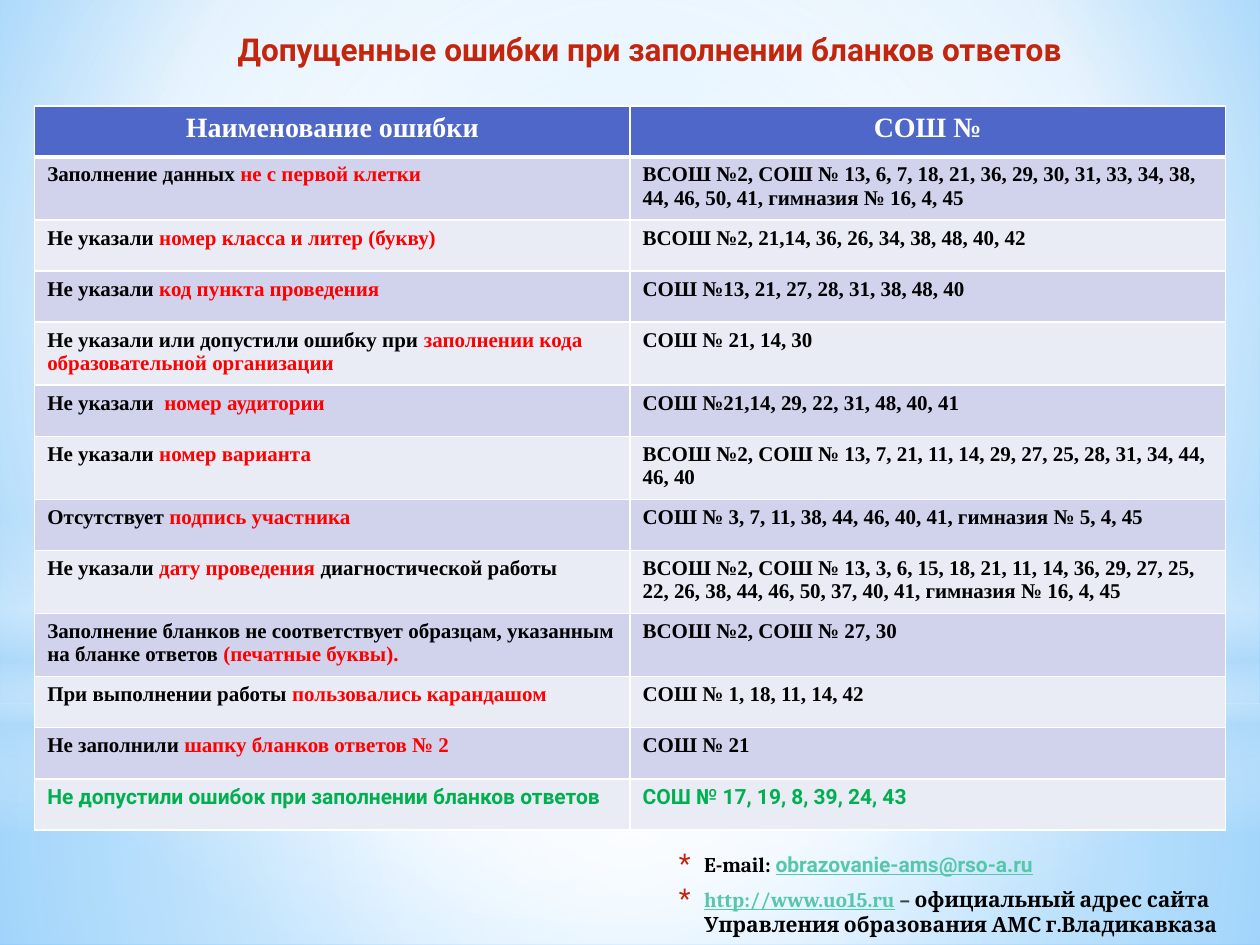
from dataclasses import dataclass
from typing import Optional

from lxml.etree import SubElement
from pptx import Presentation
from pptx.dml.color import RGBColor as RGB
from pptx.enum.shapes import MSO_SHAPE as Shape
from pptx.enum.text import MSO_ANCHOR as Anchor, PP_ALIGN as Align
from pptx.oxml import parse_xml
from pptx.oxml.ns import nsdecls, qn
from pptx.util import Pt


@dataclass(frozen=True)
class Theme:
    title: str = "C3260C"
    header: str = "4E67C8"
    bands: tuple = ("D0D3EB", "E9EBF5")
    white: str = "FFFFFF"
    text: str = "000000"
    mark: str = "FF0000"
    good: str = "00B050"
    link: str = "56C7AA"
    dash: str = "404040"
    sky: str = "B4DCFA"
    sky_mid: str = "9ED5FF"
    sky_deep: str = "5BB9FF"
    sans: str = "Roboto"
    serif: str = "Times New Roman"
    contact: str = "Cambria"
    title_size: int = 18
    header_size: int = 16
    body_size: int = 12


T = Theme()


@dataclass(frozen=True)
class Gradient:
    stops: tuple
    focus: Optional[tuple] = (50, 50, 50, 50)


@dataclass(frozen=True)
class Glow:
    shape: int
    top: float
    height: float
    gradient: Gradient


@dataclass(frozen=True)
class Mistake:
    before: str
    marked: str
    schools: str
    after: str = ""


SKY = Gradient(((0, T.sky_mid, 100), (60, T.white, 100), (100, T.sky_deep, 100)), (20, 10, 20, 60))
GLOWS = (
    Glow(Shape.RECTANGLE, 401.8, 138.2,
         Gradient(((0, T.white, 91), (37, T.white, 76), (100, T.sky, 79)))),
    Glow(Shape.RECTANGLE, 0, 401.8,
         Gradient(((0, T.white, 89), (48, T.white, 62), (100, T.sky, 79)))),
    Glow(Shape.RECTANGLE, 296.6, 180,
         Gradient(((0, T.white, 0), (29, T.white, 30), (45, T.sky, 40),
                   (55, T.white, 26), (65, T.sky, 60), (100, T.white, 0)), None)),
    Glow(Shape.OVAL, 126, 401.8, Gradient(((0, T.white, 100), (56, T.white, 0)))),
)
MISTAKES = (
    Mistake("Заполнение данных ", "не с первой клетки",
            "ВСОШ №2, СОШ № 13, 6, 7, 18, 21, 36, 29, 30, 31, 33, 34, 38, 44, 46, 50, 41, гимназия № 16, 4, 45"),
    Mistake("Не указали ", "номер класса и литер (букву)",
            "ВСОШ №2, 21,14, 36, 26, 34, 38, 48, 40, 42"),
    Mistake("Не указали ", "код пункта проведения", "СОШ №13, 21, 27, 28, 31, 38, 48, 40"),
    Mistake("Не указали или допустили ошибку при ", "заполнении кода образовательной организации",
            "СОШ № 21, 14, 30"),
    Mistake("Не указали  ", "номер аудитории", "СОШ №21,14, 29, 22, 31, 48, 40, 41"),
    Mistake("Не указали ", "номер варианта",
            "ВСОШ №2, СОШ № 13, 7, 21, 11, 14, 29, 27, 25, 28, 31, 34, 44, 46, 40"),
    Mistake("Отсутствует ", "подпись участника",
            "СОШ № 3, 7, 11, 38, 44, 46, 40, 41, гимназия № 5, 4, 45"),
    Mistake("Не указали ", "дату проведения ",
            "ВСОШ №2, СОШ № 13, 3, 6, 15, 18, 21, 11, 14, 36, 29, 27, 25, 22, 26, 38, 44, 46, 50, 37, 40, 41, "
            "гимназия № 16, 4, 45", "диагностической работы"),
    Mistake("Заполнение бланков не соответствует образцам, указанным на бланке ответов ",
            "(печатные буквы).", "ВСОШ №2, СОШ № 27, 30"),
    Mistake("При выполнении работы ", "пользовались карандашом", "СОШ № 1, 18, 11, 14, 42"),
    Mistake("Не заполнили ", "шапку бланков ответов № 2", "СОШ № 21"),
)
NO_MISTAKES = ("Не допустили ошибок при заполнении бланков ответов", "СОШ № 17, 19, 8, 39, 24, 43")


def add_run(p, text: str, *, font: str = T.serif, size: float = T.body_size,
            color: str = T.text, bold: bool = True, underline: bool = False) -> None:
    r = p.add_run()
    r.text = text
    r.font.name, r.font.size = font, Pt(size)
    r.font.bold, r.font.underline = bold, underline
    r.font.color.rgb = RGB.from_string(color)


def set_gradient(target, element, gradient: Gradient) -> None:
    target.fill.solid()
    stops = "".join(
        f'<a:gs pos="{pos * 1000}"><a:srgbClr val="{color}"><a:alpha val="{alpha * 1000}"/></a:srgbClr></a:gs>'
        for pos, color, alpha in gradient.stops)
    if gradient.focus:
        sides = " ".join(f'{side}="{v * 1000}"' for side, v in zip("ltrb", gradient.focus))
        course = f'<a:path path="circle"><a:fillToRect {sides}/></a:path>'
    else:
        course = '<a:lin ang="5400000" scaled="0"/>'
    solid = element.xpath(".//a:solidFill")[0]
    solid.getparent().replace(solid, parse_xml(
        f'<a:gradFill {nsdecls("a")} rotWithShape="1"><a:gsLst>{stops}</a:gsLst>{course}</a:gradFill>'))


def add_glow(s, glow: Glow) -> None:
    sp = s.shapes.add_shape(glow.shape, 0, Pt(glow.top), Pt(720), Pt(glow.height))
    sp.shadow.inherit = False
    sp.line.fill.background()
    set_gradient(sp, sp.element, glow.gradient)


def add_text_box(s, left: float, top: float, width: float, height: float, anchor):
    tf = s.shapes.add_textbox(Pt(left), Pt(top), Pt(width), Pt(height)).text_frame
    tf.word_wrap = True
    tf.vertical_anchor = anchor
    return tf


def style_cell(cell, fill: str, top: float = 1, bottom: float = 1) -> None:
    tc_pr = cell._tc.get_or_add_tcPr()
    for side, width in (("L", 1), ("R", 1), ("T", top), ("B", bottom)):
        tc_pr.append(parse_xml(
            f'<a:ln{side} {nsdecls("a")} w="{Pt(width)}"><a:solidFill>'
            f'<a:srgbClr val="{T.white}"/></a:solidFill></a:ln{side}>'))
    cell.fill.solid()
    cell.fill.fore_color.rgb = RGB.from_string(fill)


def add_mistake_table(s) -> None:
    count = len(MISTAKES) + 2
    table = s.shapes.add_table(count, 2, Pt(19.8), Pt(60.5), Pt(680.4), Pt(29.2 * count)).table
    for cell, text in zip(table.rows[0].cells, ("Наименование ошибки", "СОШ №")):
        style_cell(cell, T.header, bottom=3)
        p = cell.text_frame.paragraphs[0]
        p.alignment = Align.CENTER
        add_run(p, text, size=T.header_size, color=T.white)
    for i in range(1, count):
        for cell in table.rows[i].cells:
            style_cell(cell, T.bands[(i - 1) % 2], top=3 if i == 1 else 1)
    for i, mistake in enumerate(MISTAKES, 1):
        name, schools = (c.text_frame.paragraphs[0] for c in table.rows[i].cells)
        add_run(name, mistake.before)
        add_run(name, mistake.marked, color=T.mark)
        if mistake.after:
            add_run(name, mistake.after)
        add_run(schools, mistake.schools)
    for cell, text in zip(table.rows[count - 1].cells, NO_MISTAKES):
        add_run(cell.text_frame.paragraphs[0], text, font=T.sans, color=T.good)


def format_bullet(p) -> None:
    p.space_before, p.space_after = Pt(2.4), Pt(3)
    p_pr = p._p.get_or_add_pPr()
    p_pr.set("marL", str(Pt(18)))
    p_pr.set("indent", str(Pt(-14.4)))
    SubElement(SubElement(p_pr, qn("a:buClr")), qn("a:srgbClr"), val=T.title)
    SubElement(p_pr, qn("a:buSzPct"), val="130000")
    SubElement(p_pr, qn("a:buFont"), typeface=T.sans)
    SubElement(p_pr, qn("a:buChar"), char="*")


def add_contacts(s) -> None:
    tf = add_text_box(s, 377.3, 483.1, 342.7, 56.9, Anchor.TOP)
    mail, site = tf.paragraphs[0], tf.add_paragraph()
    for p in (mail, site):
        format_bullet(p)
    add_run(mail, "E-mail: ", font=T.contact)
    add_run(mail, "obrazovanie-ams@rso-a.ru", font=T.sans, color=T.link, underline=True)
    add_run(site, "http://www.uo15.ru", font=T.contact, color=T.link, underline=True)
    add_run(site, " – ", font=T.contact, color=T.dash)
    add_run(site, "официальный адрес сайта Управления образования АМС г.Владикавказа", font=T.contact)


def main() -> None:
    prs = Presentation()
    prs.slide_width, prs.slide_height = Pt(720), Pt(540)
    s = prs.slides.add_slide(prs.slide_layouts[6])
    set_gradient(s.background, s.element, SKY)
    for glow in GLOWS:
        add_glow(s, glow)
    title = add_text_box(s, 70.6, 12.2, 601.2, 31, Anchor.MIDDLE).paragraphs[0]
    title.alignment = Align.CENTER
    add_run(title, "Допущенные ошибки при заполнении бланков ответов",
            font=T.sans, size=T.title_size, color=T.title)
    add_mistake_table(s)
    add_contacts(s)
    prs.save("out.pptx")


if __name__ == "__main__":
    main()
